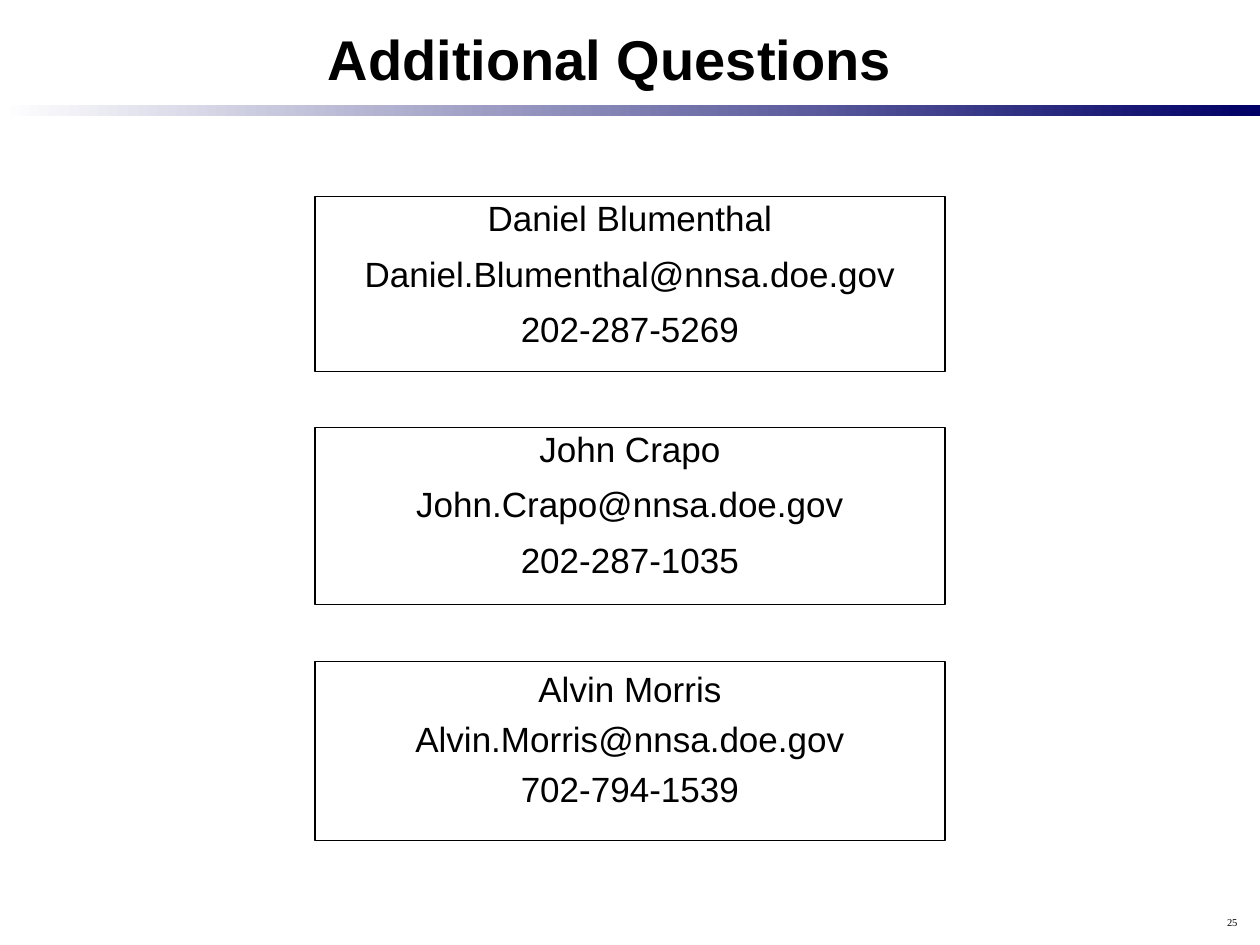
from pptx import Presentation
from pptx.dml.color import RGBColor
from pptx.enum.shapes import MSO_SHAPE
from pptx.enum.text import MSO_ANCHOR, PP_ALIGN
from pptx.util import Inches, Pt

RECTANGLE = MSO_SHAPE.RECTANGLE
TOP, MIDDLE = MSO_ANCHOR.TOP, MSO_ANCHOR.MIDDLE
CENTER, RIGHT = PP_ALIGN.CENTER, PP_ALIGN.RIGHT

TITLE = "Additional Questions"
PAGE_NUMBER = "25"
LOOSE = {"line_spacing": 0.9, "gap": 10, "insets": (0.07, 0.04)}
TIGHT = {"line_spacing": 1.0, "gap": 4.6, "insets": (0.1, 0.05)}
# top, height, contact lines, paragraph format
CONTACTS = [
    (1.56, 1.39, ["Daniel Blumenthal", "Daniel.Blumenthal@nnsa.doe.gov", "202-287-5269"], LOOSE),
    (3.39, 1.41, ["John Crapo", "John.Crapo@nnsa.doe.gov", "202-287-1035"], LOOSE),
    (5.25, 1.42, ["Alvin Morris", "Alvin.Morris@nnsa.doe.gov", "702-794-1539"], TIGHT),
]

THEME = {
    "text": RGBColor(0, 0, 0),
    "band": (RGBColor(0xFF, 0xFF, 0xFF), RGBColor(0, 0, 0x66)),
    "font": "Arial",
    "number_font": "Times New Roman",
    "title_size": 32,
    "contact_size": 20,
    "number_size": 6,
}
SLIDE_WIDTH, SLIDE_HEIGHT = 10, 7.5
CONTACT_WIDTH = 5


def write(shape, lines, size, font=THEME["font"], bold=False, align=CENTER,
          anchor=TOP, line_spacing=1.0, gap=0, insets=(0.1, 0.05)):
    frame = shape.text_frame
    frame.word_wrap = True
    frame.vertical_anchor = anchor
    frame.margin_left = frame.margin_right = Inches(insets[0])
    frame.margin_top = frame.margin_bottom = Inches(insets[1])
    frame.text = "\n".join(lines)
    for index, paragraph in enumerate(frame.paragraphs):
        paragraph.alignment = align
        paragraph.line_spacing = line_spacing
        paragraph.space_before = Pt(gap if index else 0)
        paragraph.font.size = Pt(size)
        paragraph.font.name = font
        paragraph.font.bold = bold
        paragraph.font.color.rgb = THEME["text"]


def add_rectangle(slide, left, top, width, height):
    rectangle = slide.shapes.add_shape(
        RECTANGLE, Inches(left), Inches(top), Inches(width), Inches(height))
    rectangle.shadow.inherit = False
    return rectangle


def add_title(slide):
    title = slide.shapes.title
    title.left, title.top = Inches(0.92), Inches(0.14)
    title.width, title.height = Inches(7.84), Inches(0.64)
    write(title, [TITLE], THEME["title_size"], bold=True, anchor=MIDDLE)


def add_band(slide):
    band = add_rectangle(slide, 0, 0.83, SLIDE_WIDTH, 0.09)
    band.line.fill.background()
    band.fill.gradient()
    band.fill.gradient_angle = 0
    for stop, color, position in zip(band.fill.gradient_stops, THEME["band"], (0, 1)):
        stop.color.rgb = color
        stop.position = position


def add_contact(slide, top, height, lines, paragraph_format):
    left = (SLIDE_WIDTH - CONTACT_WIDTH) / 2
    contact = add_rectangle(slide, left, top, CONTACT_WIDTH, height)
    contact.fill.background()
    contact.line.color.rgb = THEME["text"]
    contact.line.width = Pt(0.75)
    write(contact, lines, THEME["contact_size"], **paragraph_format)


def add_page_number(slide):
    number = slide.shapes.add_textbox(Inches(9.42), Inches(7.22), Inches(0.5), Inches(0.2))
    write(number, [PAGE_NUMBER], THEME["number_size"], font=THEME["number_font"], align=RIGHT)


def main():
    deck = Presentation()
    deck.slide_width, deck.slide_height = Inches(SLIDE_WIDTH), Inches(SLIDE_HEIGHT)
    slide = deck.slides.add_slide(deck.slide_layouts.get_by_name("Title Only"))
    add_band(slide)
    add_title(slide)
    for contact in CONTACTS:
        add_contact(slide, *contact)
    add_page_number(slide)
    deck.save("out.pptx")


if __name__ == "__main__":
    main()
